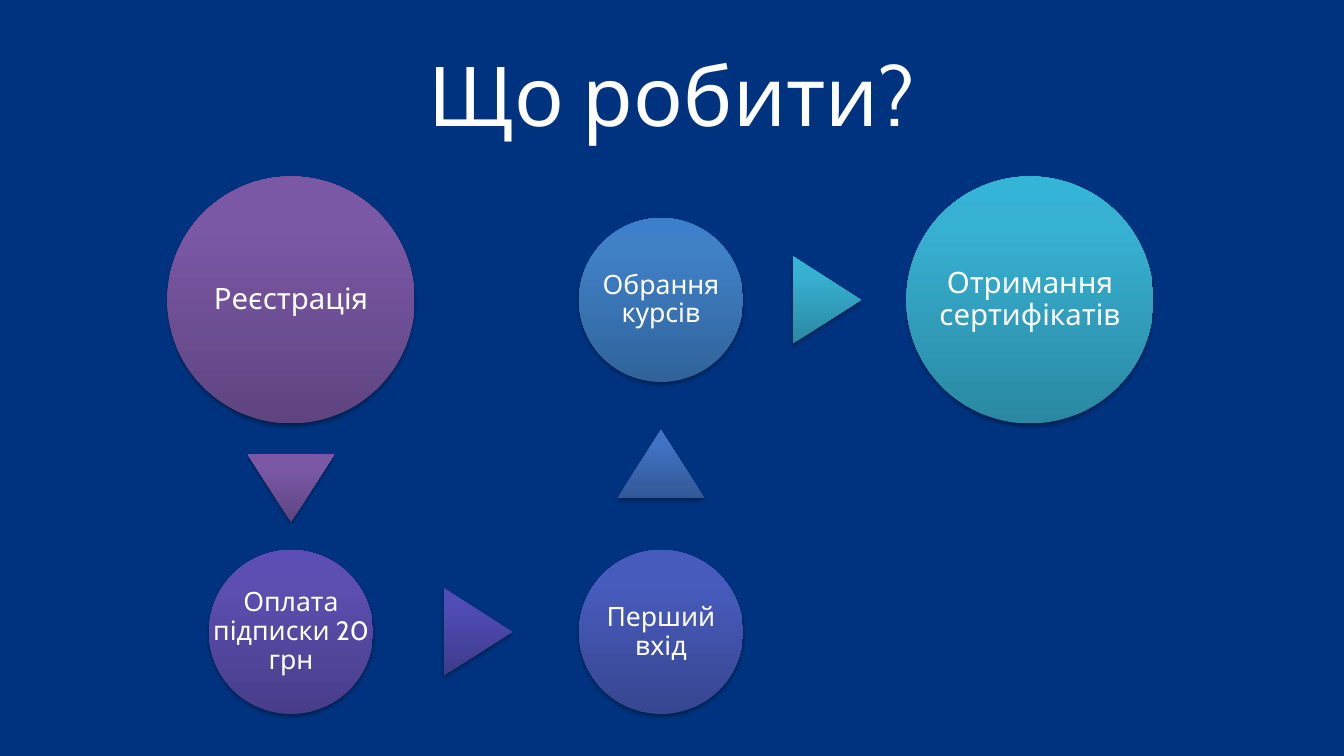
import pptx
import pptx.util
import pptx.oxml
import pptx.oxml.ns
import pptx.dml.color
import pptx.enum.shapes
import pptx.enum.text

PX = 914400 / 100.8
FONT = "Cabin"
COLORS = {"background": "00337F", "text": "FFFFFF", "shadow": "000000"}
# Gradient stops from bottom to top, at 0, 80 and 100 percent
GRADIENTS = {
    "purple": ("5F4480", "7B58A6", "7C57A8"),
    "violet": ("483D89", "5D4FB1", "5C4EB4"),
    "indigo": ("3E3B8B", "504CB5", "4F4BB8"),
    "royal": ("374691", "475BBC", "455ABF"),
    "blue": ("325897", "4172C4", "3F72C7"),
    "azure": ("306399", "3F80C7", "3C80CB"),
    "teal": ("2A88A2", "37B1D2", "34B4D6"),
}
LARGE, SMALL = 247, 164  # circle diameters
ARROW_WIDTH, ARROW_HEIGHT = 87, 68
COLUMNS = (224, 594, 963)  # centres, from the left of the flow
ROWS = (123, 455)  # centres, from the top of the flow

# text, column, row, diameter, font size, gradient
STEPS = (
    ("Реєстрація", 0, 0, LARGE, 21, "purple"),
    ("Оплата підписки 20 грн", 0, 1, SMALL, 19, "violet"),
    ("Перший вхід", 1, 1, SMALL, 19, "royal"),
    ("Обрання курсів", 1, 0, SMALL, 19, "azure"),
    ("Отримання сертифікатів", 2, 0, LARGE, 21, "teal"),
)
# centre x, centre y, rotation, gradient
ARROWS = (
    (COLUMNS[0], 311, 180, "purple"),
    (411, ROWS[1], 90, "indigo"),
    (COLUMNS[1], 287, 0, "blue"),
    (760, ROWS[0], 90, "teal"),
)


def px(length):
    return pptx.util.Emu(round(length * PX))


def color(name):
    return pptx.dml.color.RGBColor.from_string(COLORS[name])


def centred(x, y, width, height):
    return px(x - width / 2), px(y - height / 2), px(width), px(height)


def add_text(shapes, text, box, size, spacing=1.0, inset=(3, 3)):
    frame = shapes.add_textbox(*box).text_frame
    frame.word_wrap = True
    frame.vertical_anchor = pptx.enum.text.MSO_ANCHOR.MIDDLE
    frame.margin_left = frame.margin_right = px(inset[0])
    frame.margin_top = frame.margin_bottom = px(inset[1])
    para = frame.paragraphs[0]
    para.alignment = pptx.enum.text.PP_ALIGN.CENTER
    para.line_spacing = spacing
    span = para.add_run()
    span.text = text
    span.font.name = FONT
    span.font.size = pptx.util.Pt(size)
    span.font.color.rgb = color("text")


def add_glossy(shapes, kind, box, gradient, rotation=0):
    shape = shapes.add_shape(kind, *box)
    shape.rotation = rotation
    shape.line.fill.background()
    shape.shadow.inherit = False
    namespace = pptx.oxml.ns.nsdecls("a")
    # Upright gradient, whatever the rotation of the shape
    stops = "".join(
        f'<a:gs pos="{percent * 1000}"><a:srgbClr val="{value}"/></a:gs>'
        for percent, value in zip((0, 80, 100), GRADIENTS[gradient])
    )
    fill = pptx.oxml.parse_xml(
        f'<a:gradFill {namespace} rotWithShape="0"><a:gsLst>{stops}</a:gsLst>'
        '<a:lin ang="16200000" scaled="0"/></a:gradFill>'
    )
    properties = shape.element.spPr
    properties.find(pptx.oxml.ns.qn("a:ln")).addprevious(fill)
    # Soft shadow below
    shadow = pptx.oxml.parse_xml(
        f'<a:outerShdw {namespace} blurRad="40000" dist="23000" dir="5400000" '
        f'rotWithShape="0"><a:srgbClr val="{COLORS["shadow"]}">'
        '<a:alpha val="35000"/></a:srgbClr></a:outerShdw>'
    )
    properties.find(pptx.oxml.ns.qn("a:effectLst")).append(shadow)


def draw_title(page, left, top, width, height):
    box = [px(length) for length in (left, top, width, height)]
    add_text(page.shapes, "Що робити?", box, 59, inset=(13, 7))


def draw_flow(page, left, top):
    shapes = page.shapes.add_group_shape().shapes
    kinds = pptx.enum.shapes.MSO_SHAPE
    # Steps
    for text, column, row, diameter, size, gradient in STEPS:
        box = centred(left + COLUMNS[column], top + ROWS[row], diameter, diameter)
        add_glossy(shapes, kinds.OVAL, box, gradient)
        add_text(shapes, text, box, size, spacing=0.9)
    # Arrows between steps
    for x, y, rotation, gradient in ARROWS:
        box = centred(left + x, top + y, ARROW_WIDTH, ARROW_HEIGHT)
        add_glossy(shapes, kinds.ISOSCELES_TRIANGLE, box, gradient, rotation)


def main():
    deck = pptx.Presentation()
    deck.slide_width, deck.slide_height = px(1344), px(756)
    page = deck.slides.add_slide(deck.slide_layouts[6])
    page.background.fill.solid()
    page.background.fill.fore_color.rgb = color("background")
    draw_title(page, 67, 30, 1210, 126)
    draw_flow(page, 67, 177)
    deck.save("out.pptx")


if __name__ == "__main__":
    main()
